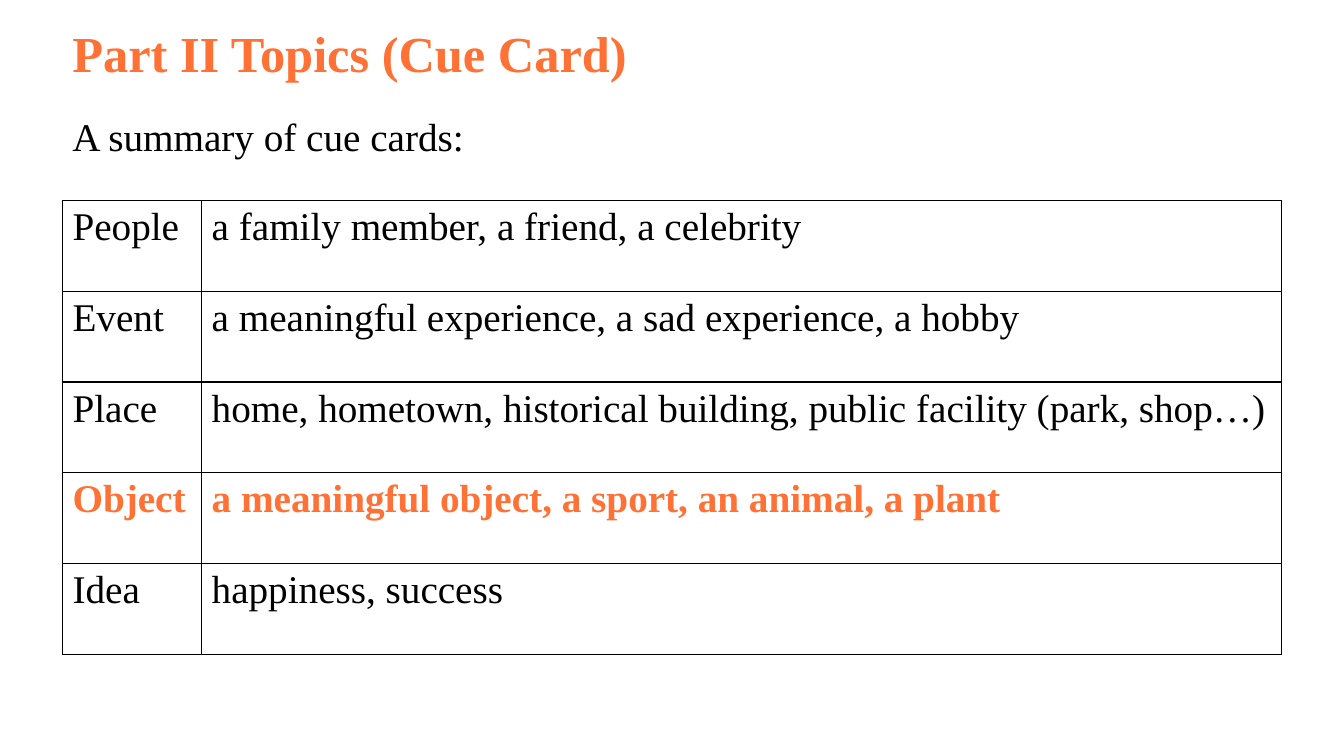
from dataclasses import dataclass

from lxml import etree
from pptx import Presentation
from pptx import util as u
from pptx.dml import color
from pptx.enum import text
from pptx.oxml import ns


@dataclass(frozen=True)
class Theme:
    font: str = "Times New Roman"
    ink: str = "000000"
    accent: str = "FF7135"
    title_size: int = 36
    body_size: int = 28
    border_width: int = 1


THEME = Theme()
LEFT = 0.62
COLUMN_WIDTHS = (1.38, 10.71)
ROW_HEIGHT = 0.9
HIGHLIGHTED_TOPIC = "Object"
CUE_CARDS = (
    ("People", "a family member, a friend, a celebrity"),
    ("Event", "a meaningful experience, a sad experience, a hobby"),
    ("Place", "home, hometown, historical building, public facility (park, shop…)"),
    ("Object", "a meaningful object, a sport, an animal, a plant"),
    ("Idea", "happiness, success"),
)


def write_text(text_frame, content, size, highlighted=False, align=text.PP_ALIGN.LEFT):
    text_frame.text = content
    paragraph = text_frame.paragraphs[0]
    paragraph.alignment = align
    font = paragraph.runs[0].font
    font.name = THEME.font
    font.size = u.Pt(size)
    font.bold = highlighted
    font.color.rgb = color.RGBColor.from_string(THEME.accent if highlighted else THEME.ink)


def add_text_box(slide, box, content, size, anchor, **style):
    shape = slide.shapes.add_textbox(*(u.Inches(length) for length in box))
    text_frame = shape.text_frame
    text_frame.word_wrap = True
    text_frame.vertical_anchor = anchor
    write_text(text_frame, content, size, **style)
    text_frame.paragraphs[0].line_spacing = 0.9


def set_borders(cell):
    properties = cell._tc.get_or_add_tcPr()
    # Border elements must come before the cell's fill
    for position, side in enumerate(("lnL", "lnR", "lnT", "lnB")):
        line = etree.Element(ns.qn(f"a:{side}"), w=str(u.Pt(THEME.border_width)))
        fill = etree.SubElement(line, ns.qn("a:solidFill"))
        etree.SubElement(fill, ns.qn("a:srgbClr"), val=THEME.ink)
        properties.insert(position, line)


def add_cue_card_table(slide, top):
    frame = slide.shapes.add_table(
        len(CUE_CARDS), len(COLUMN_WIDTHS), u.Inches(LEFT), u.Inches(top),
        u.Inches(sum(COLUMN_WIDTHS)), u.Inches(ROW_HEIGHT * len(CUE_CARDS)))
    table = frame.table
    table.first_row = False
    table.horz_banding = False
    for column, width in zip(table.columns, COLUMN_WIDTHS):
        column.width = u.Inches(width)
    alignments = (text.PP_ALIGN.LEFT, text.PP_ALIGN.JUSTIFY)
    for row, card in zip(table.rows, CUE_CARDS):
        row.height = u.Inches(ROW_HEIGHT)
        for cell, content, align in zip(row.cells, card, alignments):
            write_text(cell.text_frame, content, THEME.body_size,
                       highlighted=card[0] == HIGHLIGHTED_TOPIC, align=align)
            cell.fill.background()
            set_borders(cell)


def main():
    presentation = Presentation()
    presentation.slide_width = u.Inches(13.33)
    presentation.slide_height = u.Inches(7.5)
    slide = presentation.slides.add_slide(presentation.slide_layouts[6])

    # Heading and introduction
    add_text_box(slide, (LEFT, 0.19, 9.39, 0.74), "Part II Topics (Cue Card)",
                 THEME.title_size, text.MSO_ANCHOR.MIDDLE, highlighted=True)
    add_text_box(slide, (LEFT, 1.12, 11.95, 0.6), "A summary of cue cards:",
                 THEME.body_size, text.MSO_ANCHOR.TOP, align=text.PP_ALIGN.JUSTIFY)

    # Topics and examples
    add_cue_card_table(slide, 1.99)

    presentation.save("out.pptx")


if __name__ == "__main__":
    main()
